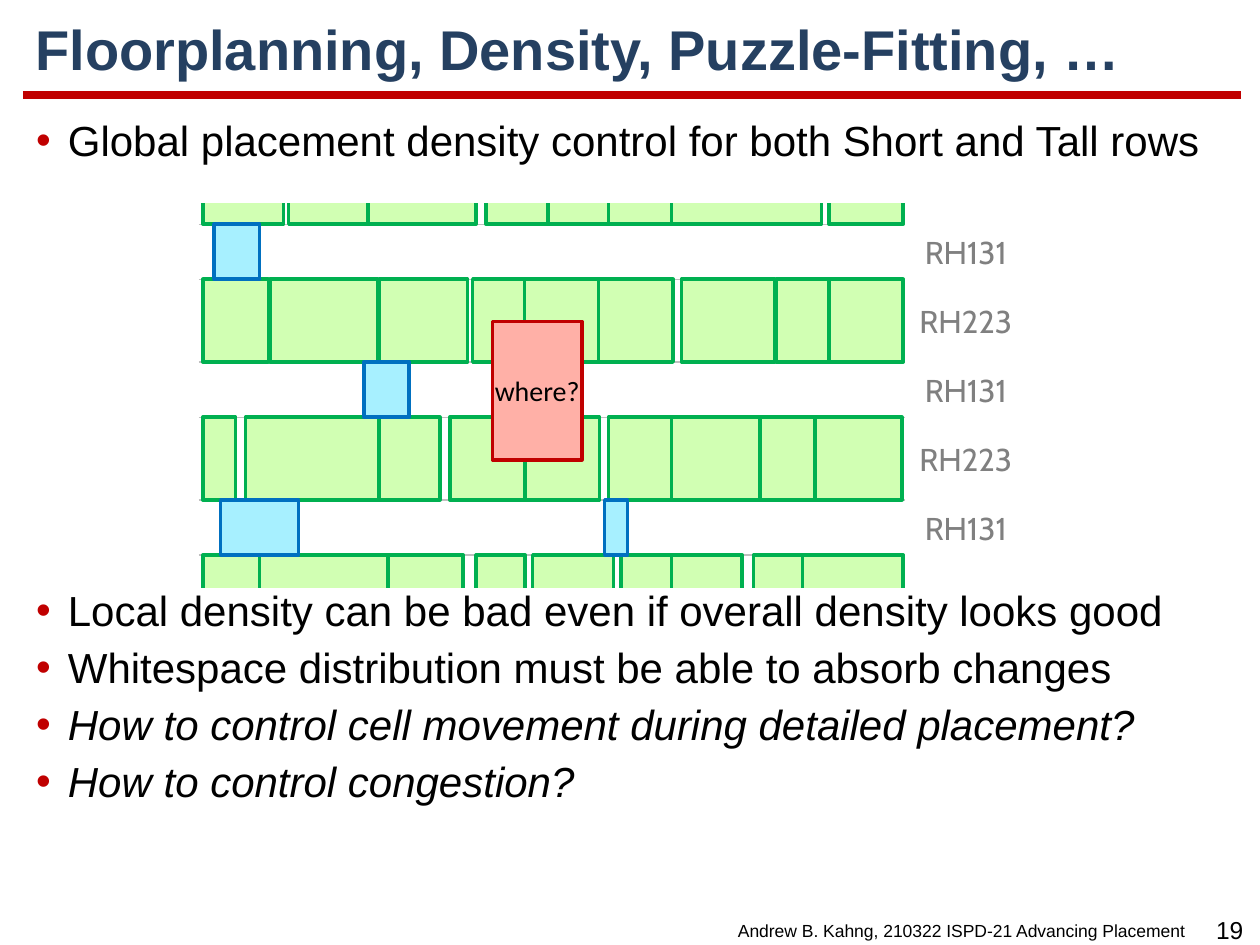
import lxml.etree
import pptx
import pptx.dml.color
import pptx.enum.shapes
import pptx.enum.text
import pptx.oxml.ns
import pptx.util

Cm = pptx.util.Cm
Pt = pptx.util.Pt
RGBColor = pptx.dml.color.RGBColor
ALIGN = pptx.enum.text.PP_ALIGN
ANCHOR = pptx.enum.text.MSO_ANCHOR
qn = pptx.oxml.ns.qn

NAVY = RGBColor(0x25, 0x40, 0x61)
RED = RGBColor(0xC0, 0x00, 0x00)
PINK = RGBColor(0xFF, 0xB0, 0xA7)
GREEN = RGBColor(0x00, 0xB0, 0x50)
PALE_GREEN = RGBColor(0xD1, 0xFF, 0xB3)
BLUE = RGBColor(0x00, 0x70, 0xC0)
PALE_BLUE = RGBColor(0xA7, 0xF0, 0xFF)
LABEL_GRAY = RGBColor(0x80, 0x80, 0x80)
RULE_GRAY = RGBColor(0xBF, 0xBF, 0xBF)
BLACK = RGBColor(0, 0, 0)
WHITE = RGBColor(0xFF, 0xFF, 0xFF)

# Row geometry in cm: tall and short rows alternate, a tall one first.
FIRST_ROW_TOP = 2.85
TALL = 1.67
SHORT = 1.11
ROW_LEFT = 4.01
ROW_RIGHT = 18.24

# Cells are (left, width) in cm.
TALL_ROWS = [
    [(4.09, 1.63), (5.82, 1.63), (7.42, 2.18), (9.8, 1.24), (11.05, 1.22),
     (12.27, 1.3), (13.54, 3.02), (16.71, 1.5)],
    [(4.09, 1.32), (5.44, 2.18), (7.65, 1.78), (9.53, 1.07), (10.57, 1.5),
     (12.07, 1.5), (13.74, 1.88), (15.65, 1.07), (16.71, 1.5)],
    [(4.09, 0.66), (4.95, 2.69), (7.65, 1.22), (9.07, 1.52), (10.59, 1.5),
     (12.27, 1.3), (13.54, 1.78), (15.32, 1.12), (16.43, 1.75)],
    [(4.09, 1.14), (5.23, 2.59), (7.82, 1.52), (9.6, 0.99), (10.74, 1.63),
     (12.52, 1.04), (13.54, 1.42), (15.19, 0.99), (16.18, 2.03)],
]
SHORT_ROWS = [
    [(4.32, 0.91)],
    [(7.34, 0.91)],
    [(4.45, 1.57), (12.19, 0.46)],
]


def add_rule(slide, left, right, y, color, width):
    rule = slide.shapes.add_connector(
        pptx.enum.shapes.MSO_CONNECTOR.STRAIGHT, Cm(left), Cm(y), Cm(right), Cm(y))
    rule.line.color.rgb = color
    rule.line.width = Pt(width)
    lxml.etree.SubElement(rule._element.spPr, qn("a:effectLst"))


def add_block(slide, left, top, width, height, fill, outline):
    block = slide.shapes.add_shape(
        pptx.enum.shapes.MSO_SHAPE.RECTANGLE, Cm(left), Cm(top), Cm(width), Cm(height))
    block.shadow.inherit = False
    block.fill.solid()
    block.fill.fore_color.rgb = fill
    block.line.color.rgb = outline
    block.line.width = Pt(2)
    return block


def format_paragraph(paragraph, font, size, color, align=ALIGN.LEFT):
    paragraph.alignment = align
    paragraph.font.name = font
    paragraph.font.size = Pt(size)
    paragraph.font.color.rgb = color


def add_label(slide, box, text, font, size, color, align, wrap=False):
    label = slide.shapes.add_textbox(*map(Cm, box))
    frame = label.text_frame
    frame.word_wrap = wrap
    frame.vertical_anchor = ANCHOR.MIDDLE
    frame.text = text
    format_paragraph(frame.paragraphs[0], font, size, color, align)


def add_bullet(paragraph):
    properties = paragraph._p.get_or_add_pPr()
    properties.set("marL", str(Cm(0.64)))
    properties.set("indent", str(Cm(-0.64)))
    bullet_color = lxml.etree.SubElement(properties, qn("a:buClr"))
    lxml.etree.SubElement(bullet_color, qn("a:srgbClr"), val=str(RED))
    lxml.etree.SubElement(properties, qn("a:buFont"), typeface="Arial")
    lxml.etree.SubElement(properties, qn("a:buChar"), char="•")


def add_bullets(slide, top, height, items):
    """Write a bulleted list; items are (text, italic) pairs."""
    frame = slide.shapes.add_textbox(Cm(0.48), Cm(top), Cm(24.54), Cm(height)).text_frame
    frame.word_wrap = True
    for index, (text, italic) in enumerate(items):
        paragraph = frame.add_paragraph() if index else frame.paragraphs[0]
        paragraph.text = text
        add_bullet(paragraph)
        paragraph.line_spacing = 0.85
        if index:
            paragraph.space_before = Pt(8.2)
        format_paragraph(paragraph, "Arial", 24, BLACK)
        if italic:
            paragraph.font.italic = True


def add_title(slide, text):
    title = slide.shapes.title
    title.left, title.top, title.width, title.height = map(Cm, (0.46, 0.23, 24.59, 1.65))
    frame = title.text_frame
    frame.text = text
    frame.vertical_anchor = ANCHOR.MIDDLE
    heading = frame.paragraphs[0]
    heading.line_spacing = 0.9
    format_paragraph(heading, "Arial", 32, NAVY)
    heading.font.bold = True


def add_footer(slide):
    add_label(slide, (24.23, 18.31, 1.12, 0.86), "19", "Arial", 14, BLACK, ALIGN.CENTER)
    add_label(slide, (14.17, 18.42, 9.96, 0.69),
              "Andrew B. Kahng, 210322 ISPD-21 Advancing Placement",
              "Arial", 10, BLACK, ALIGN.RIGHT, wrap=True)


def add_placement_rows(slide):
    tall_tops = [FIRST_ROW_TOP + i * (TALL + SHORT) for i in range(len(TALL_ROWS))]
    short_tops = [top + TALL for top in tall_tops[:-1]]

    for y in short_tops + tall_tops[1:]:
        add_rule(slide, ROW_LEFT, ROW_RIGHT, y, RULE_GRAY, 0.75)
    for name, tops, height in (("RH131", short_tops, SHORT), ("RH223", tall_tops[1:-1], TALL)):
        for top in tops:
            add_label(slide, (ROW_RIGHT, top, 2.46, height), name,
                      "Cabin", 18, LABEL_GRAY, ALIGN.CENTER)
    for rows, tops, height, fill, outline in (
            (TALL_ROWS, tall_tops, TALL, PALE_GREEN, GREEN),
            (SHORT_ROWS, short_tops, SHORT, PALE_BLUE, BLUE)):
        for cells, top in zip(rows, tops):
            for left, width in cells:
                add_block(slide, left, top, width, height, fill, outline)

    # White bands trim the outermost rows.
    for top in (2.39, 11.89):
        add_block(slide, 3.35, top, 16.28, TALL, WHITE, WHITE)


def add_unplaced_cell(slide):
    cell = add_block(slide, 9.93, 6.48, 1.8, 2.79, PINK, RED)
    frame = cell.text_frame
    frame.word_wrap = False
    frame.vertical_anchor = ANCHOR.MIDDLE
    frame.text = "where?"
    format_paragraph(frame.paragraphs[0], "Calibri", 16, BLACK, ALIGN.CENTER)


def main():
    deck = pptx.Presentation()
    deck.slide_width, deck.slide_height = Cm(25.4), Cm(19.05)
    slide = deck.slides.add_slide(deck.slide_layouts[5])

    add_title(slide, "Floorplanning, Density, Puzzle-Fitting, …")
    add_rule(slide, 0.46, 25.02, 1.91, RED, 4.5)
    add_footer(slide)
    add_placement_rows(slide)
    add_unplaced_cell(slide)
    add_bullets(slide, 2.34, 1.2, [
        ("Global placement density control for both Short and Tall rows", False)])
    add_bullets(slide, 11.81, 5.97, [
        ("Local density can be bad even if overall density looks good", False),
        ("Whitespace distribution must be able to absorb changes", False),
        ("How to control cell movement during detailed placement?", True),
        ("How to control congestion?", True)])
    deck.save("out.pptx")


if __name__ == "__main__":
    main()
